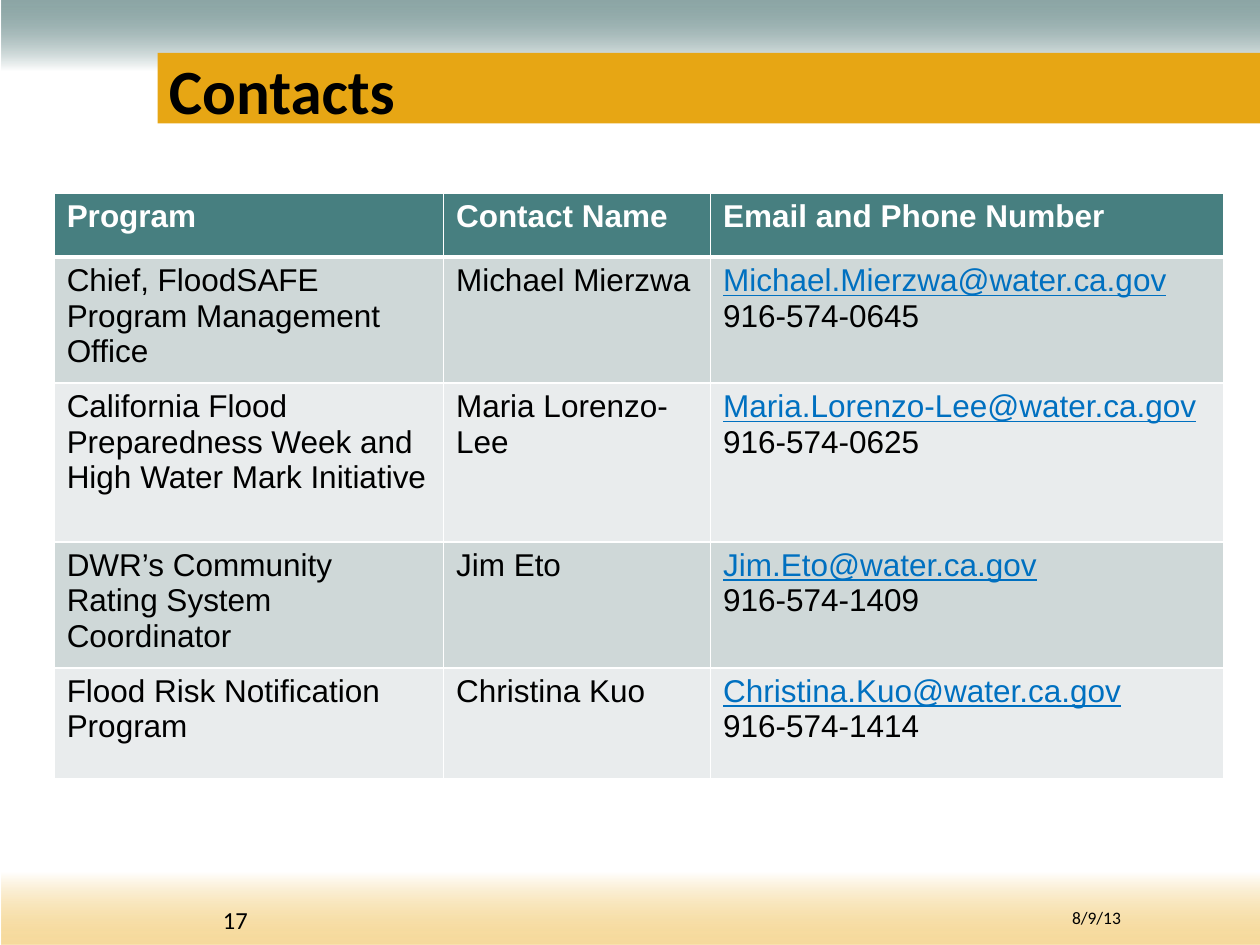
from lxml import etree
from pptx import Presentation
from pptx.dml.color import RGBColor
from pptx.enum.shapes import MSO_SHAPE as Shape
from pptx.enum.text import MSO_ANCHOR as Anchor, MSO_AUTO_SIZE as AutoSize, PP_ALIGN as Align
from pptx.oxml.ns import qn
from pptx.util import Inches, Pt

BLACK = RGBColor(0x00, 0x00, 0x00)
WHITE = RGBColor(0xFF, 0xFF, 0xFF)
TEAL = RGBColor(0x21, 0x53, 0x52)
GOLD = RGBColor(0xE7, 0xA6, 0x14)
SAND = RGBColor(0xEE, 0xB8, 0x40)
HEADER_TEAL = RGBColor(0x47, 0x7F, 0x80)
ROW_FILLS = RGBColor(0xCF, 0xD8, 0xD8), RGBColor(0xE9, 0xEC, 0xED)
EMAIL_BLUE = RGBColor(0x00, 0x70, 0xC0)

TITLE_FORMAT = {"name": "Calibri", "size": Pt(36), "bold": True}
NUMBER_FORMAT = {"name": "Calibri", "size": Pt(14)}
DATE_FORMAT = {"name": "Calibri", "size": Pt(10)}
HEADER_FORMAT = {"name": "Arial", "size": Pt(18), "bold": True}
BODY_FORMAT = {"name": "Arial", "size": Pt(18), "bold": False}
EMAIL_FORMAT = BODY_FORMAT | {"underline": True}

COLUMN_WIDTHS = 3.09, 2.12, 4.07
ROW_HEIGHTS = 0.51, 0.88, 1.26, 0.88, 0.88
HEADERS = "Program", "Contact Name", "Email and Phone Number"
CONTACTS = [
    ("Chief, FloodSAFE Program Management Office", "Michael Mierzwa",
     "Michael.Mierzwa@water.ca.gov", "916-574-0645"),
    ("California Flood Preparedness Week and High Water Mark Initiative", "Maria Lorenzo-Lee",
     "Maria.Lorenzo-Lee@water.ca.gov", "916-574-0625"),
    ("DWR’s Community Rating System Coordinator", "Jim Eto",
     "Jim.Eto@water.ca.gov", "916-574-1409"),
    ("Flood Risk Notification Program", "Christina Kuo",
     "Christina.Kuo@water.ca.gov", "916-574-1414"),
]


def inches(box):
    return [Inches(length) for length in box]


def write(paragraph, text, formats, color=BLACK):
    run = paragraph.add_run()
    run.text = text
    for attribute, value in formats.items():
        setattr(run.font, attribute, value)
    run.font.color.rgb = color


def add_band(slide, box):
    band = slide.shapes.add_shape(Shape.RECTANGLE, *inches(box))
    band.shadow.inherit = False
    band.line.fill.background()
    return band


def add_fading_band(slide, box, color, angle):
    """Half-transparent colour at the slide edge, fading to white."""
    band = add_band(slide, box)
    band.fill.gradient()
    band.fill.gradient_angle = angle
    for stop, position, stop_color in zip(band.fill.gradient_stops, (0, 0.52), (color, WHITE)):
        stop.position = position
        stop.color.rgb = stop_color
    edge_color = next(band._element.spPr.iter(qn("a:srgbClr")))
    etree.SubElement(edge_color, qn("a:alpha"), val="51000")


def add_title(slide, box, text):
    band = add_band(slide, (1.25, 0.42, 8.75, 0.56))
    band.fill.solid()
    band.fill.fore_color.rgb = GOLD
    title = slide.shapes.title
    title.left, title.top, title.width, title.height = inches(box)
    frame = title.text_frame
    frame.auto_size = AutoSize.NONE
    frame.vertical_anchor = Anchor.MIDDLE
    frame.paragraphs[0].alignment = Align.LEFT
    write(frame.paragraphs[0], text, TITLE_FORMAT)
    band._element.addnext(title._element)  # title text in front of its band


def add_footer_text(slide, box, text, formats):
    frame = slide.shapes.add_textbox(*inches(box)).text_frame
    frame.word_wrap = True
    write(frame.paragraphs[0], text, formats)


def set_borders(cell, widths):
    properties = cell._tc.get_or_add_tcPr()
    for index, (side, width) in enumerate(widths.items()):
        line = etree.Element(qn(f"a:ln{side}"), w=str(Pt(width)))
        fill = etree.SubElement(line, qn("a:solidFill"))
        etree.SubElement(fill, qn("a:srgbClr"), val=str(WHITE))
        properties.insert(index, line)


def add_contacts_table(slide, box):
    table = slide.shapes.add_table(len(ROW_HEIGHTS), len(COLUMN_WIDTHS), *inches(box)).table
    table.horz_banding = False
    for column, width in zip(table.columns, COLUMN_WIDTHS):
        column.width = Inches(width)
    for row, height in zip(table.rows, ROW_HEIGHTS):
        row.height = Inches(height)

    # Fills and borders, with a heavier rule under the header
    for row_index, row in enumerate(table.rows):
        for cell in row.cells:
            cell.fill.solid()
            cell.fill.fore_color.rgb = ROW_FILLS[(row_index - 1) % 2] if row_index else HEADER_TEAL
            set_borders(cell, {"L": 1, "R": 1, "T": 3 if row_index == 1 else 1,
                               "B": 1 if row_index else 3})

    # Header and contact text
    for column_index, header in enumerate(HEADERS):
        write(table.cell(0, column_index).text_frame.paragraphs[0], header, HEADER_FORMAT, WHITE)
    for row_index, (program, name, email, phone) in enumerate(CONTACTS, 1):
        frames = [table.cell(row_index, index).text_frame for index in range(3)]
        write(frames[0].paragraphs[0], program, BODY_FORMAT)
        write(frames[1].paragraphs[0], name, BODY_FORMAT)
        write(frames[2].paragraphs[0], email, EMAIL_FORMAT, EMAIL_BLUE)
        write(frames[2].add_paragraph(), phone, BODY_FORMAT)


def main():
    deck = Presentation()
    deck.slide_width, deck.slide_height = Inches(10), Inches(7.5)
    slide = deck.slides.add_slide(deck.slide_layouts[5])
    add_fading_band(slide, (0.01, 0, 9.99, 1.09), TEAL, 270)
    add_title(slide, (1.24, 0.42, 8.77, 0.58), "Contacts")
    add_fading_band(slide, (0.01, 6.39, 9.99, 1.11), SAND, 90)
    add_footer_text(slide, (1.67, 7.13, 0.85, 0.34), "17", NUMBER_FORMAT)
    add_footer_text(slide, (8.41, 7.15, 0.85, 0.27), "8/9/13", DATE_FORMAT)
    add_contacts_table(slide, (0.43, 1.53, 9.28, 4.42))
    deck.save("out.pptx")


if __name__ == "__main__":
    main()
